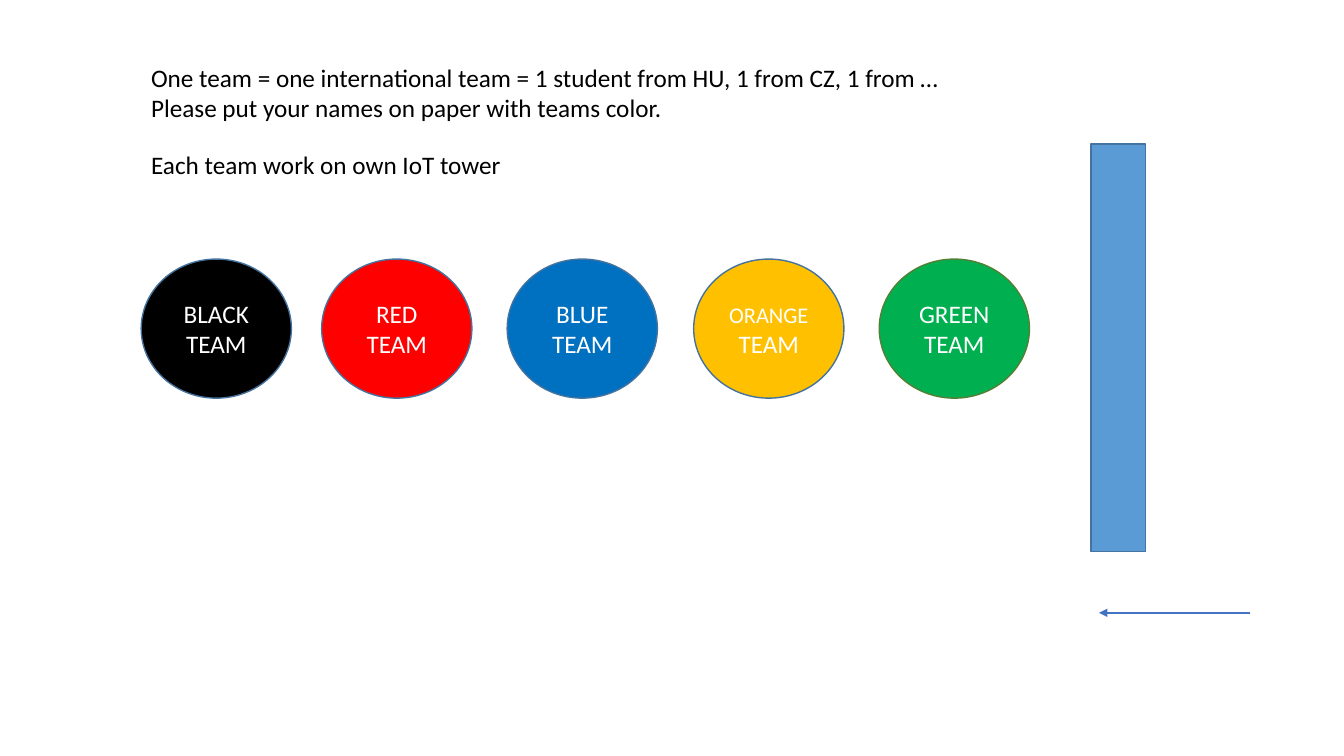
from dataclasses import dataclass

from lxml import etree
from pptx import Presentation
from pptx import util as u
from pptx.dml.color import RGBColor
from pptx.enum import shapes, text
from pptx.oxml.ns import qn

EMU_PER_PX = 9144


@dataclass(frozen=True)
class Theme:
    font: str = "Calibri"
    body_size: int = 18
    small_size: int = 16
    outline_width: float = 1
    arrow_width: float = 1.5
    ink: str = "000000"
    on_fill: str = "FFFFFF"
    outline: str = "43739E"
    green_outline: str = "538035"
    tower: str = "5B9BD5"
    arrow: str = "4472C4"
    black: str = "000000"
    red: str = "FF0000"
    blue: str = "0070C0"
    orange: str = "FFC000"
    green: str = "00B050"


THEME = Theme()

TEAMS = [
    (140, "BLACK", THEME.black, THEME.outline, THEME.body_size),
    (319, "RED", THEME.red, THEME.outline, THEME.body_size),
    (503, "BLUE", THEME.blue, THEME.outline, THEME.body_size),
    (688, "ORANGE", THEME.orange, THEME.outline, THEME.small_size),
    (872, "GREEN", THEME.green, THEME.green_outline, THEME.body_size),
]


def px(*lengths):
    return [u.Emu(length * EMU_PER_PX) for length in lengths]


def style_paragraph(paragraph, color):
    paragraph.font.name = THEME.font
    paragraph.font.size = u.Pt(THEME.body_size)
    paragraph.font.color.rgb = RGBColor.from_string(color)


def add_filled_shape(slide, kind, box, fill, outline):
    shape = slide.shapes.add_shape(kind, *px(*box))
    shape.shadow.inherit = False
    shape.fill.solid()
    shape.fill.fore_color.rgb = RGBColor.from_string(fill)
    shape.line.color.rgb = RGBColor.from_string(outline)
    shape.line.width = u.Pt(THEME.outline_width)
    return shape


def add_team(slide, left, name, fill, outline, name_size):
    shape = add_filled_shape(
        slide, shapes.MSO_SHAPE.OVAL, (left, 257, 149, 138), fill, outline
    )
    frame = shape.text_frame
    frame.word_wrap = True
    frame.vertical_anchor = text.MSO_ANCHOR.MIDDLE
    paragraph = frame.paragraphs[0]
    paragraph.alignment = text.PP_ALIGN.CENTER
    style_paragraph(paragraph, THEME.on_fill)
    for words, size in ((name, name_size), (" TEAM", THEME.body_size)):
        run = paragraph.add_run()
        run.text = words
        run.font.size = u.Pt(size)


def add_note(slide, box, lines):
    frame = slide.shapes.add_textbox(*px(*box)).text_frame
    frame.word_wrap = False
    frame.auto_size = text.MSO_AUTO_SIZE.SHAPE_TO_FIT_TEXT
    frame.text = "\n".join(lines)
    for paragraph in frame.paragraphs:
        style_paragraph(paragraph, THEME.ink)


def add_arrow(slide, start, end):
    connector = slide.shapes.add_connector(
        shapes.MSO_CONNECTOR.STRAIGHT, *px(*start, *end)
    )
    connector.line.color.rgb = RGBColor.from_string(THEME.arrow)
    connector.line.width = u.Pt(THEME.arrow_width)
    etree.SubElement(connector.line._get_or_add_ln(), qn("a:tailEnd"), type="triangle")
    etree.SubElement(connector._element.spPr, qn("a:effectLst"))


def main():
    presentation = Presentation()
    presentation.slide_width, presentation.slide_height = px(1333, 750)
    slide = presentation.slides.add_slide(presentation.slide_layouts.get_by_name("Blank"))

    for team in TEAMS:
        add_team(slide, *team)
    add_note(slide, (140, 143, 379, 40), ["Each team work on own IoT tower"])
    add_filled_shape(
        slide, shapes.MSO_SHAPE.RECTANGLE, (1082, 143, 54, 404), THEME.tower, THEME.outline
    )
    add_arrow(slide, (1240, 608), (1090, 608))
    add_note(
        slide,
        (140, 57, 811, 71),
        [
            "One team = one international team = 1 student from HU, 1 from CZ, 1 from …",
            "Please put your names on paper with teams color.",
        ],
    )
    presentation.save("out.pptx")


if __name__ == "__main__":
    main()
